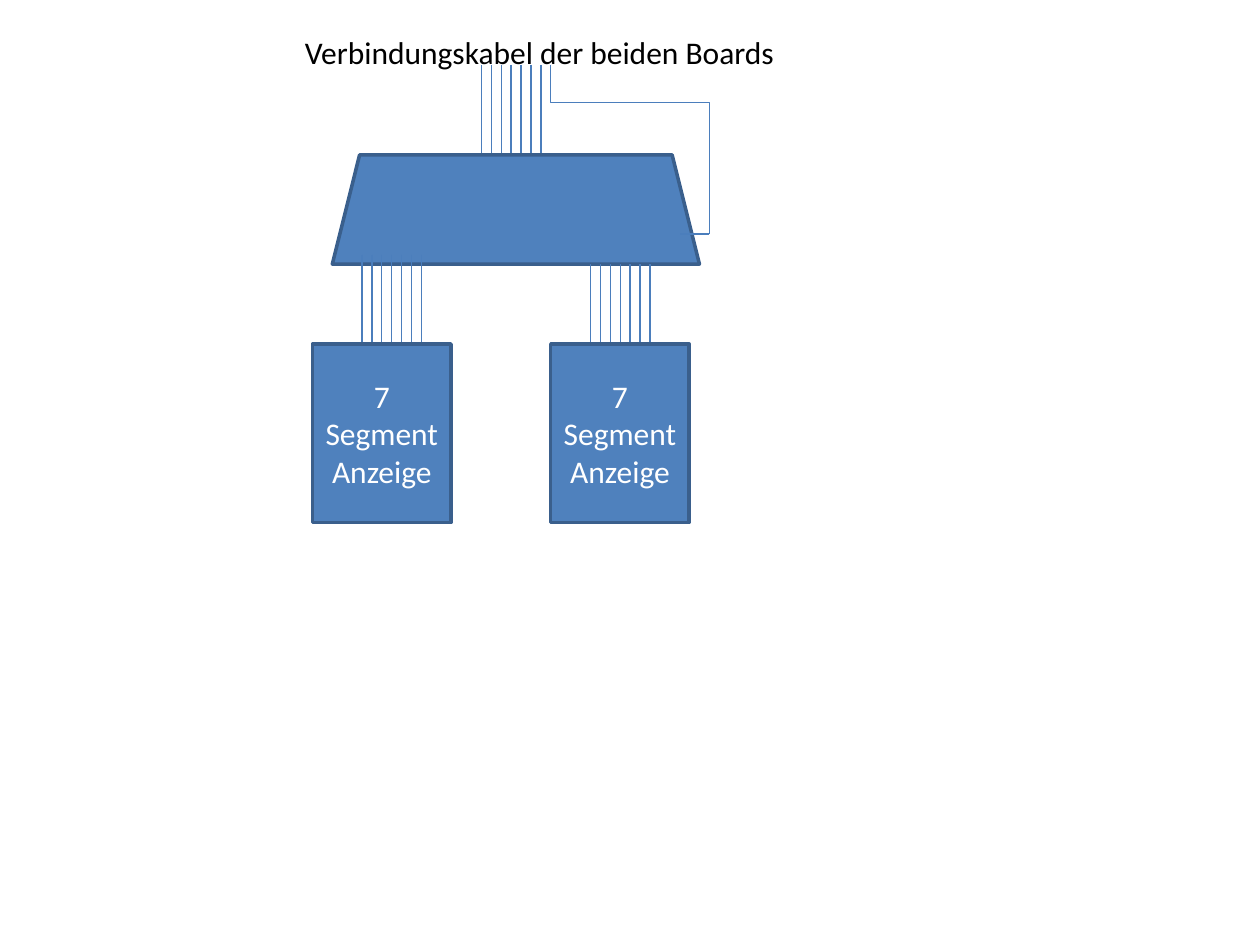
from lxml import etree
from pptx import Presentation
from pptx.dml.color import RGBColor
from pptx.enum.shapes import MSO_CONNECTOR, MSO_SHAPE
from pptx.enum.text import MSO_ANCHOR, MSO_AUTO_SIZE, PP_ALIGN
from pptx.oxml.ns import qn
from pptx.util import Pt

STRAIGHT, ELBOW = MSO_CONNECTOR.STRAIGHT, MSO_CONNECTOR.ELBOW
RECTANGLE, TRAPEZOID = MSO_SHAPE.RECTANGLE, MSO_SHAPE.TRAPEZOID
CENTER, MIDDLE = PP_ALIGN.CENTER, MSO_ANCHOR.MIDDLE
FIT_SHAPE = MSO_AUTO_SIZE.SHAPE_TO_FIT_TEXT

FILL, OUTLINE, WIRE = "4F81BD", "3A5F8C", "4B7EBC"
WIRE_COUNT, WIRE_PITCH, WIRE_LENGTH = 7, 5.67, 51.1
TOP_SIDE = 0


def rgb(value):
    return RGBColor.from_string(value)


def write_lines(frame, lines, color, align):
    for index, line in enumerate(lines):
        paragraph = frame.paragraphs[0] if index == 0 else frame.add_paragraph()
        paragraph.alignment = align
        run = paragraph.add_run()
        run.text = line
        for name, value in {"name": "Calibri", "size": Pt(18)}.items():
            setattr(run.font, name, value)
        run.font.color.rgb = rgb(color)


def add_block(slide, kind, box):
    block = slide.shapes.add_shape(kind, *map(Pt, box))
    block.shadow.inherit = False
    block.fill.solid()
    block.fill.fore_color.rgb = rgb(FILL)
    block.line.color.rgb = rgb(OUTLINE)
    block.line.width = Pt(2)
    return block


def add_wire(slide, start, end, kind=STRAIGHT):
    wire = slide.shapes.add_connector(kind, *map(Pt, (*start, *end)))
    wire.line.color.rgb = rgb(WIRE)
    wire.line.width = Pt(0.75)
    etree.SubElement(wire._element.spPr, qn("a:effectLst"))
    return wire


def add_bundle(slide, left, top):
    """Draw parallel vertical wires from left to right and return them."""
    columns = [left + i * WIRE_PITCH for i in range(WIRE_COUNT)]
    return [add_wire(slide, (x, top), (x, top + WIRE_LENGTH)) for x in columns]


def add_caption(slide, box):
    caption = slide.shapes.add_textbox(*map(Pt, box))
    for name, value in {"word_wrap": False, "auto_size": FIT_SHAPE}.items():
        setattr(caption.text_frame, name, value)
    write_lines(caption.text_frame, ["Verbindungskabel der beiden Boards"],
                "000000", PP_ALIGN.LEFT)


def add_select_wire(slide, box, tap_x):
    """Lead the eighth wire around the box's top right, then back to tap_x."""
    left, top, width, height = box
    center_x, center_y = left + width / 2, top + height / 2
    # The elbow is turned by 270 degrees, so its width runs vertically.
    elbow = add_wire(slide, (center_x + height / 2, center_y - width / 2),
                     (center_x - height / 2, center_y + width / 2), ELBOW)
    elbow._element.spPr.find(qn("a:xfrm")).set("rot", str(270 * 60000))
    guides = elbow._element.spPr.find(qn("a:prstGeom")).get_or_add_avLst()
    etree.SubElement(guides, qn("a:gd"), name="adj1", fmla="val 22100")
    add_wire(slide, (left + width, top + height), (tap_x, top + height))


def add_display(slide, box):
    display = add_block(slide, RECTANGLE, box)
    frame = display.text_frame
    for name, value in {"word_wrap": True, "vertical_anchor": MIDDLE}.items():
        setattr(frame, name, value)
    write_lines(frame, ["7", "Segment", "Anzeige"], "FFFFFF", CENTER)
    return display


def main():
    presentation = Presentation()
    presentation.slide_width, presentation.slide_height = Pt(720), Pt(540)
    slide = presentation.slides.add_slide(presentation.slide_layouts[6])

    add_bundle(slide, 275.1, 37.4)
    add_caption(slide, (167.2, 15.1, 285.8, 29.1))
    add_block(slide, TRAPEZOID, (189.9, 88.5, 209.8, 62.4))
    add_select_wire(slide, (314.7, 37.4, 90.7, 96.4), 388.3)
    left_bundle = add_bundle(slide, 206.86, 145.5)
    add_bundle(slide, 337.4, 151)
    left_display, _ = [add_display(slide, (left, 196.6, 79.2, 102))
                       for left in (178.6, 314.7)]
    left_bundle[2].end_connect(left_display, TOP_SIDE)

    presentation.save("out.pptx")


if __name__ == "__main__":
    main()
